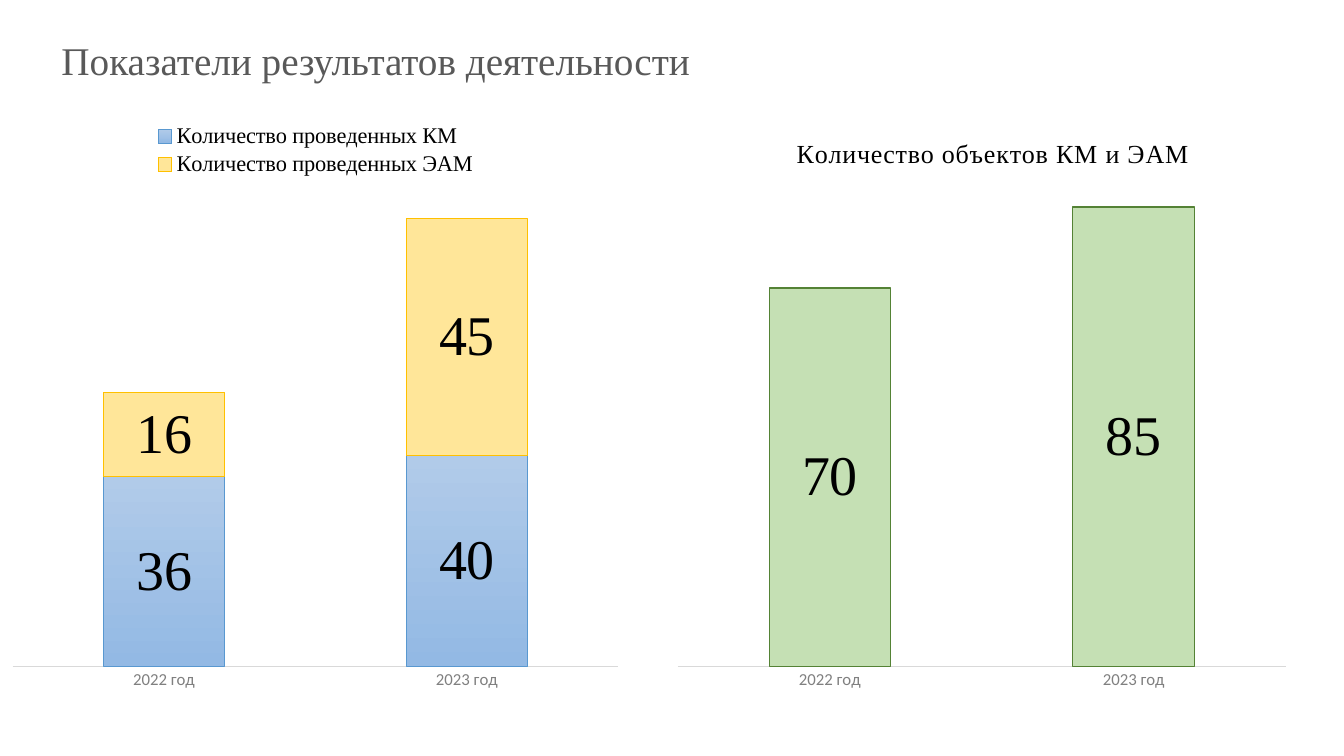
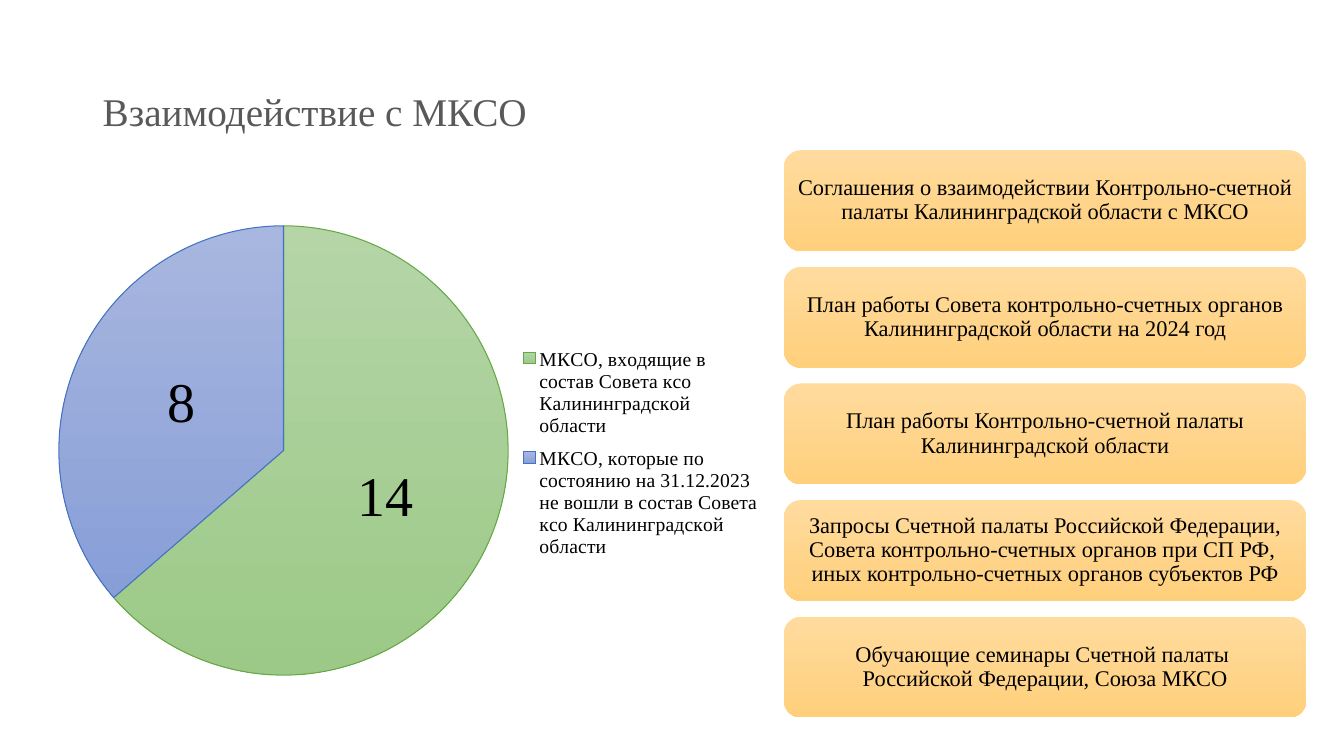
"""Builds two slides on audit results and cooperation with municipal audit bodies."""
from copy import deepcopy

from lxml import etree
from pptx import Presentation
from pptx.chart.data import CategoryChartData
from pptx.dml.color import RGBColor
from pptx.enum import chart as ch, shapes, text as tx
from pptx.oxml.ns import qn
from pptx.util import Pt


class Theme:
    serif, sans = "Times New Roman", "Calibri"
    title, ink, tick, axis = "595959", "000000", "808080", "D9D9D9"
    blue, yellow, green = ("B1CBE9", "93B9E4"), ("FFE699",), ("C5E0B4",)
    leaf, indigo, amber = ("B5D5A7", "9CC987"), ("A8B7DF", "889ED7"), ("FFDB9E", "FFD07C")
    blue_line, yellow_line, green_line = "5998D0", "FFC000", "548235"
    leaf_line, indigo_line = "66A843", "4472C4"
    title_size, value_size, box_size = 28, 40, 16
    legend_size, pie_legend_size, chart_title_size, tick_size = 16, 14, 18.6, 12


def write(tf, text, size, color=Theme.ink, align=None, line_spacing=None, spc=None):
    p = tf.paragraphs[0]
    p.text = text
    p.alignment = align
    p.line_spacing = line_spacing
    for r in p.runs:
        r.font.name = Theme.serif
        r.font.size = Pt(size)
        r.font.bold = False
        r.font.color.rgb = RGBColor.from_string(color)
        if spc:
            r.font._element.set("spc", str(spc))
    for br in p._p.findall(qn("a:br")):
        br.append(deepcopy(p.runs[0].font._element))


def paint(sp, colors, line=None):
    if len(colors) == 1:
        sp.fill.solid()
        sp.fill.fore_color.rgb = RGBColor.from_string(colors[0])
    else:
        sp.fill.gradient()
        sp.fill.gradient_angle = 270
        for stop, color in zip(sp.fill.gradient_stops, colors):
            stop.color.rgb = RGBColor.from_string(color)
    if line:
        sp.line.color.rgb = RGBColor.from_string(line)
        sp.line.width = Pt(0.75)
    else:
        sp.line.fill.background()


prs = Presentation()
prs.slide_width, prs.slide_height = Pt(960), Pt(540)

slides = []
for heading, left, top in [
    ("Показатели результатов деятельности", 36.7, -7.2),
    ("Взаимодействие с МКСО", 66.2, 28.8),
]:
    s = prs.slides.add_slide(prs.slide_layouts[5])
    sp = s.shapes.title
    sp.left, sp.top, sp.width, sp.height = Pt(left), Pt(top), Pt(828), Pt(104.4)
    sp.text_frame.vertical_anchor = tx.MSO_ANCHOR.MIDDLE
    write(sp.text_frame, heading, Theme.title_size, Theme.title, tx.PP_ALIGN.LEFT, 0.9)
    slides.append(s)
results, cooperation = slides

years = ["2022 год", "2023 год"]
members = [
    "МКСО, входящие в состав Совета ксо Калининградской области",
    "МКСО, которые по состоянию на 31.12.2023 не вошли в состав Совета ксо "
    "Калининградской области",
]
column, pie = ch.XL_CHART_TYPE.COLUMN_STACKED, ch.XL_CHART_TYPE.PIE
top, right = ch.XL_LEGEND_POSITION.TOP, ch.XL_LEGEND_POSITION.RIGHT
charts = [
    dict(slide=results, kind=column, at=(0, 77.8, 450.7, 423.4), cats=years,
         series=[("Количество проведенных КМ", (36, 40)),
                 ("Количество проведенных ЭАМ", (16, 45))],
         paints=[(Theme.blue, Theme.blue_line), (Theme.yellow, Theme.yellow_line)],
         plot=(0.02, 0.14, 0.96, 0.8),
         legend=(top, Theme.legend_size, (0.24, 0.02, 0.52, 0.1))),
    dict(slide=results, kind=column, at=(475.2, 77.8, 452.2, 423.4), cats=years,
         series=[("Количество объектов КМ и ЭАМ", (70, 85))],
         paints=[(Theme.green, Theme.green_line)],
         plot=(0.02, 0.12, 0.96, 0.82),
         title="Количество объектов КМ и ЭАМ"),
    dict(slide=cooperation, kind=pie, at=(31.7, 128.9, 517.7, 385.9), cats=members,
         series=[("Series 1", (14, 8))],
         paints=[(Theme.leaf, Theme.leaf_line), (Theme.indigo, Theme.indigo_line)],
         plot=(0.02, 0.08, 0.62, 0.84),
         legend=(right, Theme.pie_legend_size, (0.66, 0.29, 0.33, 0.43))),
]
for c in charts:
    data = CategoryChartData()
    data.categories = c["cats"]
    for name, values in c["series"]:
        data.add_series(name, values)
    chart = c["slide"].shapes.add_chart(c["kind"], *map(Pt, c["at"]), data).chart
    chart.has_title = "title" in c
    chart.has_legend = "legend" in c
    plot = chart.plots[0]
    plot.vary_by_categories = c["kind"] == pie
    plot.has_data_labels = True
    labels = plot.data_labels
    labels.show_value = True
    labels.position = ch.XL_LABEL_POSITION.CENTER
    fonts = [(labels.font, Theme.value_size, Theme.ink, Theme.serif)]
    layouts = [(chart._chartSpace.chart.plotArea, 0, c["plot"])]

    if c["kind"] == column:
        plot.gap_width, plot.overlap = 150, 100
        values = chart.value_axis
        values.visible = values.has_major_gridlines = False
        values.minimum_scale, values.maximum_scale = 0, 90
        cats = chart.category_axis
        cats.major_tick_mark = ch.XL_TICK_MARK.NONE
        cats.format.line.color.rgb = RGBColor.from_string(Theme.axis)
        cats.format.line.width = Pt(0.75)
        fonts.append((cats.tick_labels.font, Theme.tick_size, Theme.tick, Theme.sans))
        parts = plot.series
    else:
        parts = [plot.series[0].points[i] for i in range(len(c["cats"]))]
    for part, (colors, line) in zip(parts, c["paints"]):
        paint(part.format, colors, line)

    if chart.has_title:
        write(chart.chart_title.text_frame, c["title"], Theme.chart_title_size, spc=50)
        layouts.append((chart.chart_title._element, 1, (0.2, 0.04)))
    if chart.has_legend:
        position, size, box = c["legend"]
        chart.legend.position = position
        chart.legend.include_in_layout = False
        fonts.append((chart.legend.font, size, Theme.ink, Theme.serif))
        layouts.append((chart.legend._element, 1, box))

    for font, size, color, name in fonts:
        font.size, font.name, font.bold = Pt(size), name, False
        font.color.rgb = RGBColor.from_string(color)
    for parent, index, box in layouts:
        for old in parent.findall(qn("c:layout")):
            parent.remove(old)
        layout = etree.Element(qn("c:layout"))
        manual = etree.SubElement(layout, qn("c:manualLayout"))
        if index == 0:
            etree.SubElement(manual, qn("c:layoutTarget"), val="inner")
        for tag in ("xMode", "yMode"):
            etree.SubElement(manual, qn("c:" + tag), val="edge")
        for tag, value in zip("xywh", box):
            etree.SubElement(manual, qn("c:" + tag), val=str(value))
        parent.insert(index, layout)

forms = [
    "Соглашения о взаимодействии Контрольно-счетной палаты Калининградской области с МКСО",
    "План работы Совета контрольно-счетных органов Калининградской области на 2024 год",
    "План работы Контрольно-счетной палаты Калининградской области",
    "Запросы Счетной палаты Российской Федерации, Совета контрольно-счетных органов "
    "при СП РФ, \nиных контрольно-счетных органов субъектов РФ",
    "Обучающие семинары Счетной палаты \nРоссийской Федерации, Союза МКСО",
]
for i, form in enumerate(forms):
    sp = cooperation.shapes.add_shape(shapes.MSO_SHAPE.ROUNDED_RECTANGLE,
                                      Pt(560), Pt(107.3 + 83.3 * i), Pt(373), Pt(72))
    sp.shadow.inherit = False
    paint(sp, Theme.amber)
    tf = sp.text_frame
    tf.word_wrap = True
    tf.vertical_anchor = tx.MSO_ANCHOR.MIDDLE
    tf.margin_left = tf.margin_right = tf.margin_top = tf.margin_bottom = Pt(5)
    write(tf, form, Theme.box_size, align=tx.PP_ALIGN.CENTER, line_spacing=0.9)

prs.save("out.pptx")
